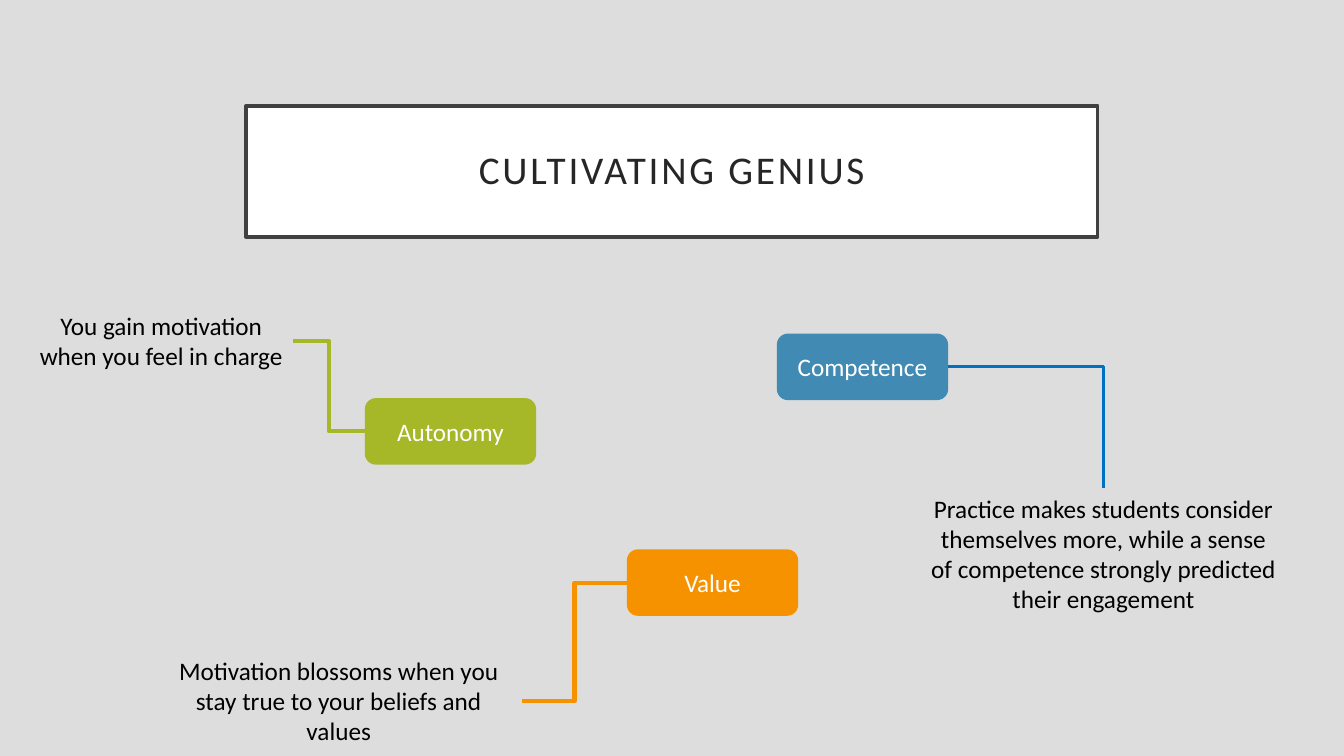
from lxml.etree import SubElement
from pptx import Presentation
from pptx.dml.color import RGBColor
from pptx.enum.shapes import MSO_CONNECTOR, MSO_SHAPE
from pptx.enum.text import MSO_ANCHOR, MSO_AUTO_SIZE, PP_ALIGN
from pptx.oxml.ns import qn
from pptx.util import Pt

BACKGROUND = RGBColor(0xDD, 0xDD, 0xDD)
WHITE = RGBColor(0xFF, 0xFF, 0xFF)
BLACK = RGBColor(0, 0, 0)
FRAME = RGBColor(0x40, 0x40, 0x40)
TITLE_TEXT = RGBColor(0x26, 0x26, 0x26)
GREEN = RGBColor(0xA6, 0xB7, 0x27)
ORANGE = RGBColor(0xF6, 0x92, 0x00)
BLUE = RGBColor(0x41, 0x8A, 0xB3)
LINK_BLUE = RGBColor(0x00, 0x70, 0xC0)

FONT = "Calibri"
LABEL_SIZE = (122.4, 47.5)
LEFT, TOP, RIGHT = 1, 0, 3  # connection sites

# label, fill, label position, note lines, note box, wrap,
# label site, note site, link preset, link colour, link width
IDEAS = [
    ("Autonomy", GREEN, (260.6, 284.4),
     ["You gain motivation", "when you feel in charge"],
     (20.9, 218.2, 188.6, 50.9), False,
     LEFT, RIGHT, "bentConnector3", GREEN, 3),
    ("Value", ORANGE, (447.8, 392.4),
     ["Motivation blossoms when you", "stay true to your beliefs and values"],
     (110.9, 464.4, 262.1, 72.7), True,
     LEFT, RIGHT, "bentConnector3", ORANGE, 3),
    ("Competence", BLUE, (554.9, 238.3),
     ["Practice makes students consider themselves more, while a sense "
      "of competence strongly predicted their engagement"],
     (656.8, 348.5, 262.8, 94.3), True,
     RIGHT, TOP, "bentConnector2", LINK_BLUE, 2.25),
]


def style_paragraph(p, size, color):
    p.alignment = PP_ALIGN.CENTER
    p.font.name = FONT
    p.font.size = Pt(size)
    p.font.color.rgb = color


def format_title(title, text, box):
    title.left, title.top, title.width, title.height = map(Pt, box)
    title.fill.solid()
    title.fill.fore_color.rgb = WHITE
    title.line.color.rgb = FRAME
    title.line.width = Pt(2.5)
    tf = title.text_frame
    tf.text = text
    tf.word_wrap = True
    tf.vertical_anchor = MSO_ANCHOR.MIDDLE
    tf.margin_left = tf.margin_right = tf.margin_top = tf.margin_bottom = Pt(14.4)
    p = tf.paragraphs[0]
    style_paragraph(p, 28, TITLE_TEXT)
    p.line_spacing = 0.9
    p.runs[0].font._element.set("spc", "200")


def add_label(slide, text, color, position):
    sp = slide.shapes.add_shape(MSO_SHAPE.ROUNDED_RECTANGLE,
                                *map(Pt, position + LABEL_SIZE))
    sp.shadow.inherit = False
    sp.fill.solid()
    sp.fill.fore_color.rgb = color
    sp.line.fill.background()
    tf = sp.text_frame
    tf.text = text
    tf.vertical_anchor = MSO_ANCHOR.MIDDLE
    style_paragraph(tf.paragraphs[0], 18, WHITE)
    return sp


def add_note(slide, lines, box, wrap):
    sp = slide.shapes.add_textbox(*map(Pt, box))
    tf = sp.text_frame
    tf.text = "\n".join(lines)
    tf.word_wrap = wrap
    tf.auto_size = MSO_AUTO_SIZE.SHAPE_TO_FIT_TEXT
    for p in tf.paragraphs:
        style_paragraph(p, 18, BLACK)
    return sp


def link(slide, label, label_site, note, note_site, preset, color, width):
    cxn = slide.shapes.add_connector(MSO_CONNECTOR.ELBOW, 0, 0, 0, 0)
    cxn.begin_connect(label, label_site)
    cxn.end_connect(note, note_site)
    cxn.line.color.rgb = color
    cxn.line.width = Pt(width)
    props = cxn._element.spPr
    props.find(qn("a:prstGeom")).set("prst", preset)
    SubElement(props, qn("a:effectLst"))


def add_idea(slide, name, fill, position, lines, box, wrap,
             label_site, note_site, preset, color, width):
    """Place a coloured label, its note and the elbow line between them."""
    label = add_label(slide, name, fill, position)
    note = add_note(slide, lines, box, wrap)
    link(slide, label, label_site, note, note_site, preset, color, width)


def main():
    prs = Presentation()
    prs.slide_width, prs.slide_height = Pt(960), Pt(540)
    slide = prs.slides.add_slide(prs.slide_layouts[5])
    slide.background.fill.solid()
    slide.background.fill.fore_color.rgb = BACKGROUND
    format_title(slide.shapes.title, "CULTIVATING GENIUS", (175.7, 75.6, 608.4, 93.6))
    for idea in IDEAS:
        add_idea(slide, *idea)
    prs.save("out.pptx")


if __name__ == "__main__":
    main()
